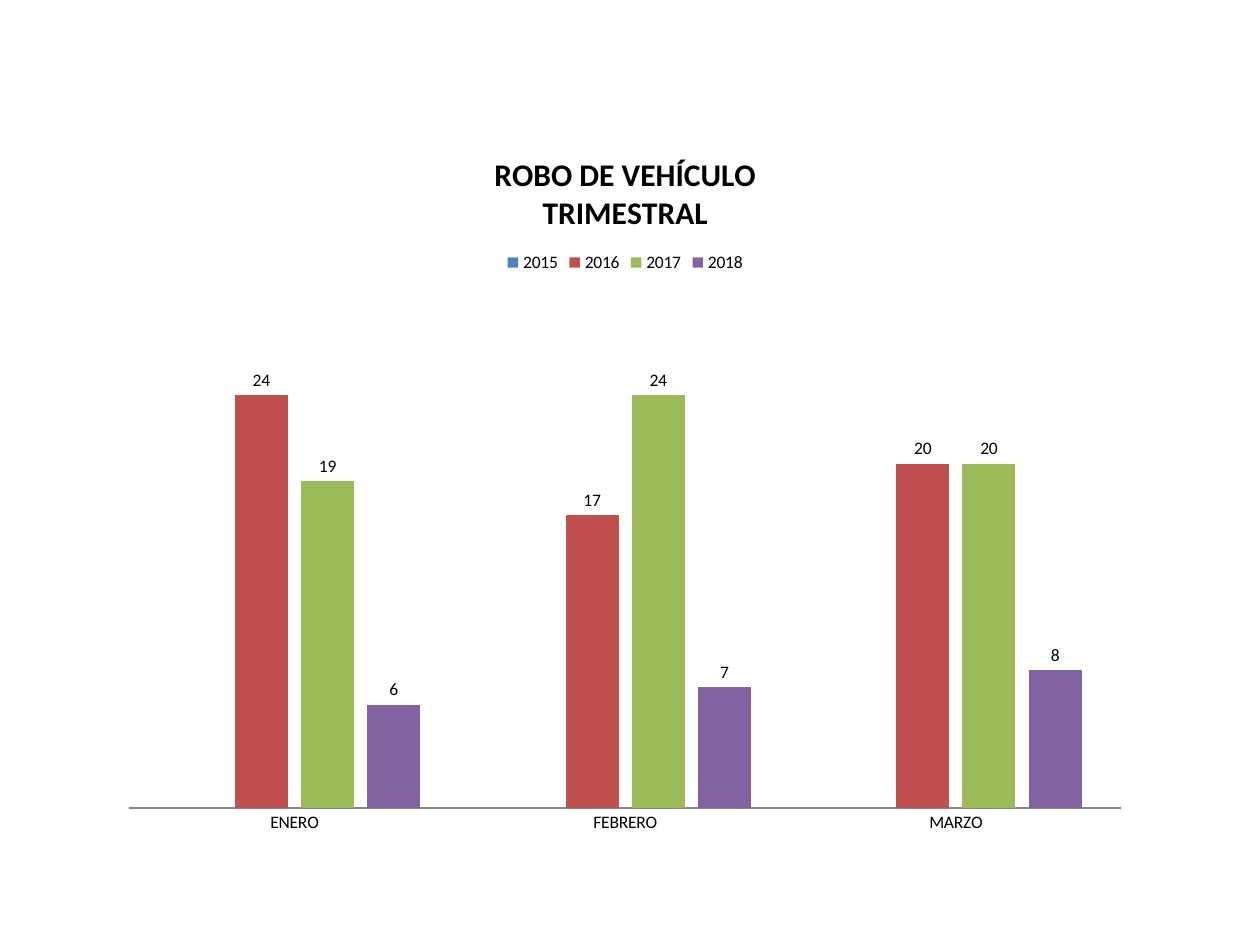
from dataclasses import dataclass

from pptx import Presentation
from pptx import util as u
from pptx.chart import data as cd
from pptx.dml import color as dc
from pptx.enum import chart as ce

Pt = u.Pt
HUES = {
    "text": "000000",
    "axis": "868686",
    "blue": "4F81BD",
    "red": "C0504D",
    "green": "9BBB59",
    "violet": "8064A2",
}


@dataclass
class Year:
    name: str
    thefts: tuple
    hue: str


MONTHS = ("ENERO", "FEBRERO", "MARZO")
YEARS = (
    Year("2015", (None, None, None), "blue"),
    Year("2016", (24, 17, 20), "red"),
    Year("2017", (19, 24, 20), "green"),
    Year("2018", (6, 7, 8), "violet"),
)
TITLE = ("ROBO DE VEHÍCULO", "TRIMESTRAL")


def tint(key: str) -> dc.RGBColor:
    return dc.RGBColor.from_string(HUES[key])


def style(font, size: float, bold: bool = False) -> None:
    font.name = "Calibri"
    font.size = Pt(size)
    font.bold = bold
    font.color.rgb = tint("text")


def add_title(chart, lines: tuple) -> None:
    chart.has_title = True
    frame = chart.chart_title.text_frame
    for i, line in enumerate(lines):
        para = frame.add_paragraph() if i else frame.paragraphs[0]
        run = para.add_run()
        run.text = line
        style(run.font, 18, True)
    chart.chart_title.include_in_layout = False


def set_axes(chart) -> None:
    months = chart.category_axis
    months.major_tick_mark = ce.XL_TICK_MARK.NONE
    months.format.line.color.rgb = tint("axis")
    months.format.line.width = Pt(0.75)
    count = chart.value_axis
    count.minimum_scale = 0
    count.maximum_scale = 30
    count.has_major_gridlines = False
    count.visible = False


def set_key(chart) -> None:
    chart.has_legend = True
    chart.legend.position = ce.XL_LEGEND_POSITION.TOP
    chart.legend.include_in_layout = False
    style(chart.legend.font, 10)


def paint(bars, year: Year) -> None:
    bars.invert_if_negative = False
    bars.format.fill.solid()
    bars.format.fill.fore_color.rgb = tint(year.hue)
    tags = bars.data_labels
    tags.show_value = True
    tags.position = ce.XL_LABEL_POSITION.OUTSIDE_END
    style(tags.font, 10)


def add_bars(slide, years: tuple) -> None:
    data = cd.CategoryChartData()
    data.categories = MONTHS
    for year in years:
        data.add_series(year.name, year.thefts)
    chart = slide.shapes.add_chart(
        ce.XL_CHART_TYPE.COLUMN_CLUSTERED,
        Pt(62), Pt(73.5), Pt(590.5), Pt(410.5), data,
    ).chart
    style(chart.font, 10)
    add_title(chart, TITLE)
    set_axes(chart)
    set_key(chart)
    plot = chart.plots[0]
    plot.vary_by_categories = False
    plot.gap_width = 150
    plot.overlap = -25
    for bars, year in zip(plot.series, years):
        paint(bars, year)


def main() -> None:
    deck = Presentation()
    deck.slide_width, deck.slide_height = Pt(720), Pt(540)
    slide = deck.slides.add_slide(deck.slide_layouts[6])
    add_bars(slide, YEARS)
    deck.save("out.pptx")


if __name__ == "__main__":
    main()
